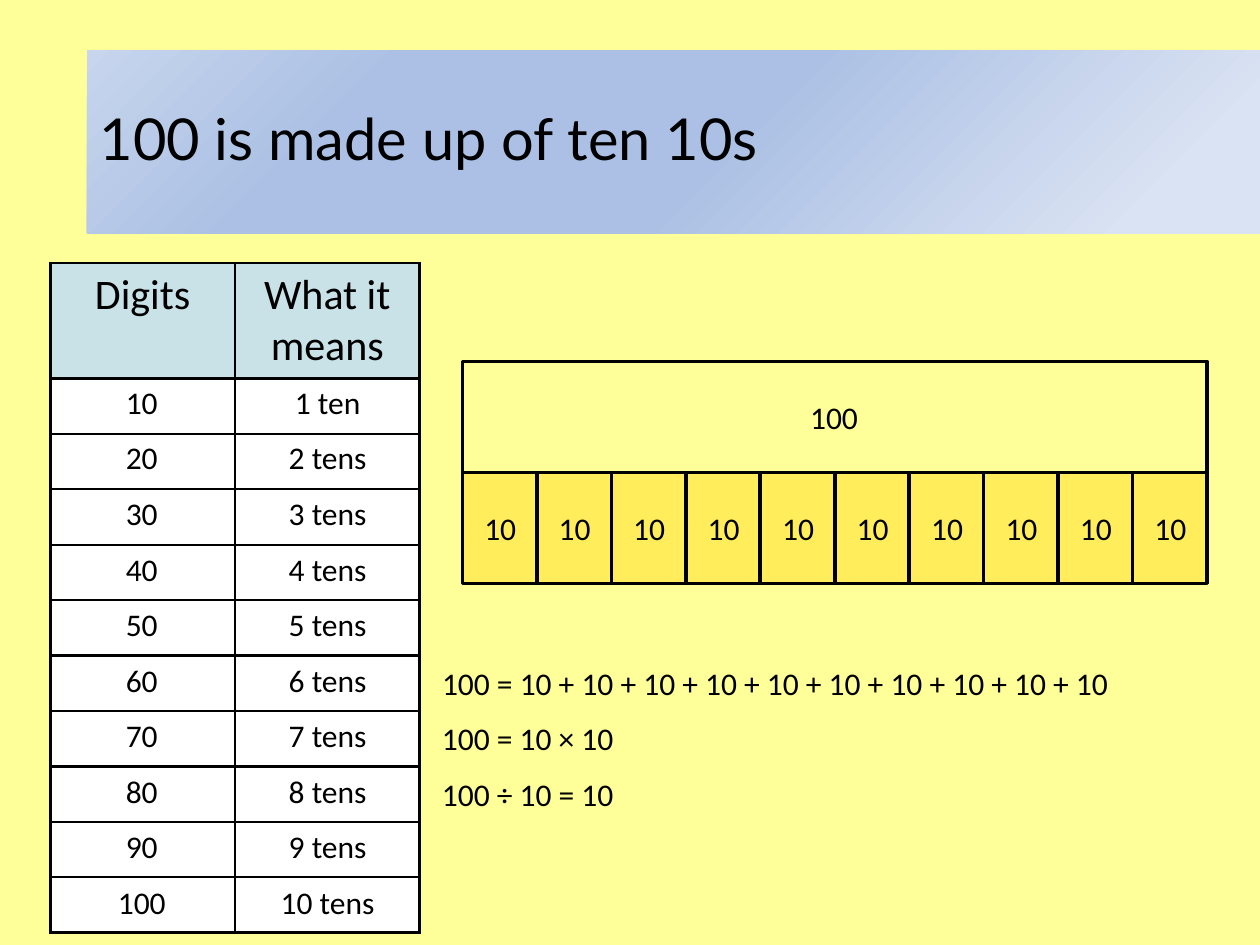
from dataclasses import dataclass

from lxml import etree
from pptx import Presentation
from pptx.dml.color import RGBColor
from pptx.enum.shapes import MSO_SHAPE
from pptx.enum.text import MSO_ANCHOR, MSO_AUTO_SIZE, PP_ALIGN
from pptx.oxml import parse_xml
from pptx.oxml.ns import nsdecls, qn
from pptx.util import Inches, Pt

RECT = MSO_SHAPE.RECTANGLE
LEFT, CENTER = PP_ALIGN.LEFT, PP_ALIGN.CENTER
MIDDLE = MSO_ANCHOR.MIDDLE
NO_AUTOFIT, GROW = MSO_AUTO_SIZE.NONE, MSO_AUTO_SIZE.SHAPE_TO_FIT_TEXT

BLACK, WHITE = "000000", "FFFFFF"
PAGE, HEADER, TEN = "FFFF99", "C8E2E8", "FFED5C"
BANNER_STOPS = [(10, "DAE3F3"), (46, "ABC0E4"), (76, "ABC0E4"), (100, "C7D5ED")]

PARTS = 10
ROW_STEP = 0.44
BAR_LEFT, BAR_TOP, BAR_WIDTH, BAR_HEIGHT = 3.67, 2.87, 5.91, 0.88
TENS_TOP = BAR_TOP + BAR_HEIGHT
PART_WIDTH = BAR_WIDTH / PARTS


@dataclass
class Label:
    text: str
    left: float
    top: float
    width: float
    align: PP_ALIGN = CENTER
    wrap: bool = True


def rgb(color: str) -> RGBColor:
    return RGBColor.from_string(color)


def write(tf, text: str, size: float, align=CENTER, font: str = "Calibri") -> None:
    tf.text = text
    p = tf.paragraphs[0]
    p.alignment = align
    p.font.name, p.font.size = font, Pt(size)
    p.font.color.rgb = rgb(BLACK)


def add_rect(s, left: float, top: float, width: float, height: float,
             fill: str = "", line: str = ""):
    sp = s.shapes.add_shape(
        RECT, Inches(left), Inches(top), Inches(width), Inches(height)
    )
    sp.shadow.inherit = False
    if fill:
        sp.fill.solid()
        sp.fill.fore_color.rgb = rgb(fill)
    else:
        sp.fill.background()
    if line:
        sp.line.color.rgb, sp.line.width = rgb(line), Pt(2)
    else:
        sp.line.fill.background()
    return sp


def add_label(s, label: Label) -> None:
    box = s.shapes.add_textbox(
        Inches(label.left), Inches(label.top), Inches(label.width), Inches(0.4)
    )
    tf = box.text_frame
    tf.word_wrap, tf.auto_size = label.wrap, GROW
    write(tf, label.text, 18, label.align)


def add_banner(s) -> None:
    sp = add_rect(s, 0.69, 0.4, 9.31, 1.45)
    stops = "".join(
        f'<a:gs pos="{pos * 1000}"><a:srgbClr val="{color}"/></a:gs>'
        for pos, color in BANNER_STOPS
    )
    gradient = parse_xml(
        f'<a:gradFill {nsdecls("a")} rotWithShape="1"><a:gsLst>{stops}</a:gsLst>'
        '<a:path path="circle"><a:fillToRect l="100000" t="100000"/></a:path>'
        '<a:tileRect r="-100000" b="-100000"/></a:gradFill>'
    )
    sp_pr = sp._element.spPr
    sp_pr.replace(sp_pr.find(qn("a:noFill")), gradient)


def add_title(s, text: str) -> None:
    """Format the title placeholder and bring it to the front."""
    title = s.shapes.title
    title.left, title.top = Inches(0.69), Inches(0.4)
    title.width, title.height = Inches(8.89), Inches(1.45)
    tf = title.text_frame
    write(tf, text, 33, LEFT, "Lato")
    tf.auto_size, tf.vertical_anchor = NO_AUTOFIT, MIDDLE
    tf.paragraphs[0].line_spacing = 0.9
    s.shapes._spTree.append(title._element)


def set_borders(cell, color: str, width: float) -> None:
    tc_pr = cell._tc.get_or_add_tcPr()
    for i, side in enumerate(("lnL", "lnR", "lnT", "lnB")):
        ln = etree.Element(qn(f"a:{side}"), w=str(Pt(width)))
        fill = etree.SubElement(ln, qn("a:solidFill"))
        etree.SubElement(fill, qn("a:srgbClr"), val=color)
        tc_pr.insert(i, ln)


def add_tens_table(s) -> None:
    """Draw the ruled grid with its header, then the labels on its rows."""
    frame = s.shapes.add_table(
        PARTS + 1, 2, Inches(0.4), Inches(2.09), Inches(2.93), Inches(5.31)
    )
    table = frame.table
    table.first_row = table.horz_banding = False
    for r, row in enumerate(table.rows):
        row.height = Inches(ROW_STEP if r else 0.42)
        for cell in row.cells:
            cell.fill.solid()
            cell.fill.fore_color.rgb = rgb(WHITE if r else HEADER)
            set_borders(cell, BLACK, 1.5)
    frame.height = Inches(5.31)
    for cell, text in zip(table.rows[0].cells, ("Digits", "What it means")):
        write(cell.text_frame, text, 24)

    for n in range(1, PARTS + 1):
        top = 2.99 + (n - 1) * 0.441
        add_label(s, Label(str(10 * n), 0.77, top, 0.71))
        add_label(s, Label(f"{n} ten" if n == 1 else f"{n} tens", 2.04, top, 1.12))


def add_ten_fills(s) -> None:
    """Stack strips that each reach one ten further."""
    for n in range(1, PARTS + 1):
        add_rect(s, BAR_LEFT, TENS_TOP, n * PART_WIDTH, BAR_HEIGHT, fill=TEN)


def add_bar_model(s) -> None:
    add_rect(s, BAR_LEFT, BAR_TOP, BAR_WIDTH, BAR_HEIGHT, line=BLACK)
    add_label(s, Label("100", 6.19, BAR_TOP + 0.24, 0.86))
    for i in range(PARTS):
        left = BAR_LEFT + i * PART_WIDTH
        add_rect(s, left, TENS_TOP, PART_WIDTH, BAR_HEIGHT, line=BLACK)
        add_label(s, Label("10", left + 0.06, TENS_TOP + 0.24, 0.48, wrap=False))


def add_equations(s) -> None:
    equations = [
        ("100 = " + " + ".join(["10"] * PARTS), 6.52),
        ("100 = 10 × 10", 1.9),
        ("100 ÷ 10 = 10", 1.9),
    ]
    for i, (text, width) in enumerate(equations):
        add_label(s, Label(text, 3.41, 5.22 + i * ROW_STEP, width, LEFT))


def main() -> None:
    prs = Presentation()
    prs.slide_width, prs.slide_height = Inches(10), Inches(7.5)
    s = prs.slides.add_slide(prs.slide_layouts[5])
    s.background.fill.solid()
    s.background.fill.fore_color.rgb = rgb(PAGE)

    add_banner(s)
    add_ten_fills(s)
    add_tens_table(s)
    add_bar_model(s)
    add_equations(s)
    add_title(s, "100 is made up of ten 10s")
    prs.save("out.pptx")


if __name__ == "__main__":
    main()
